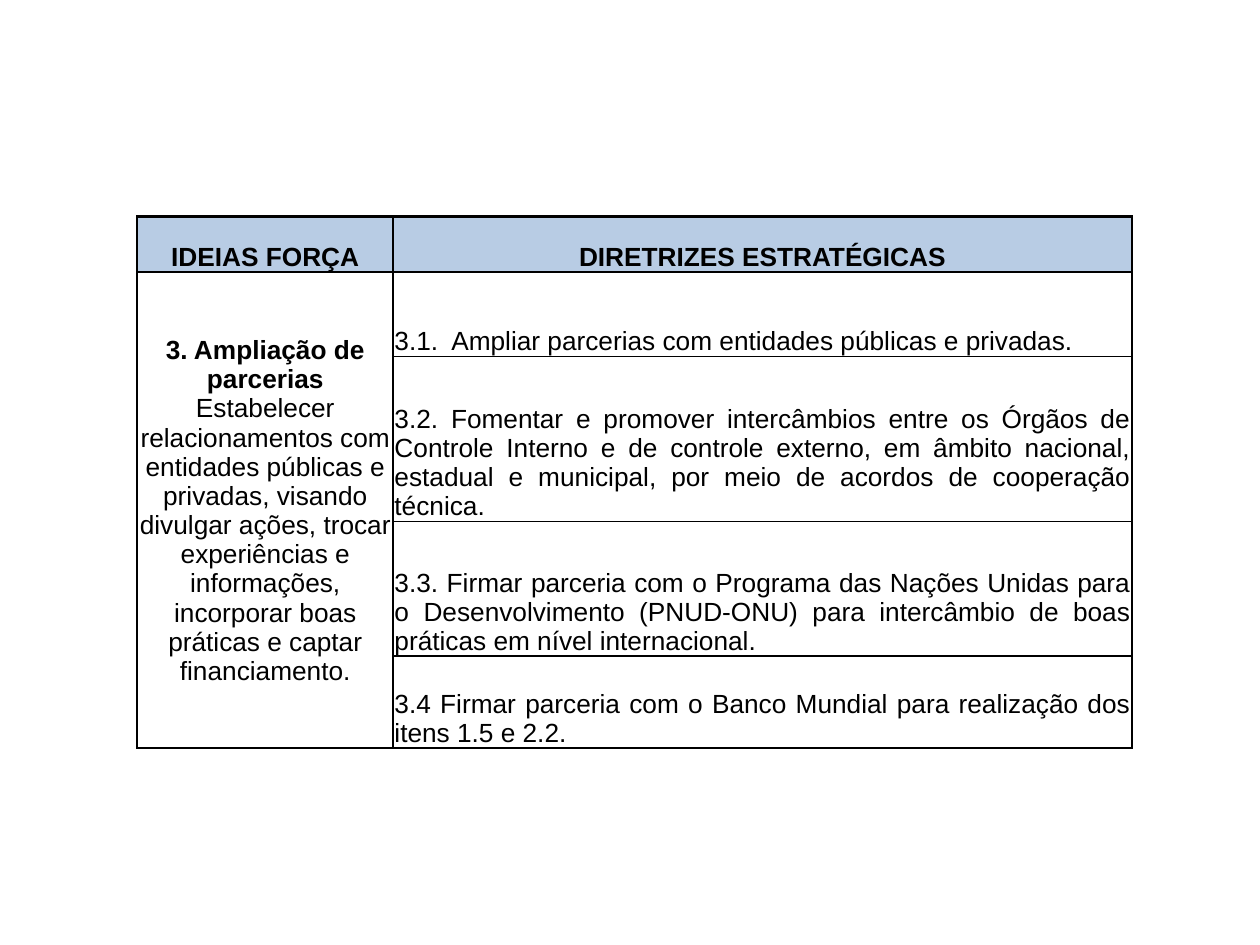
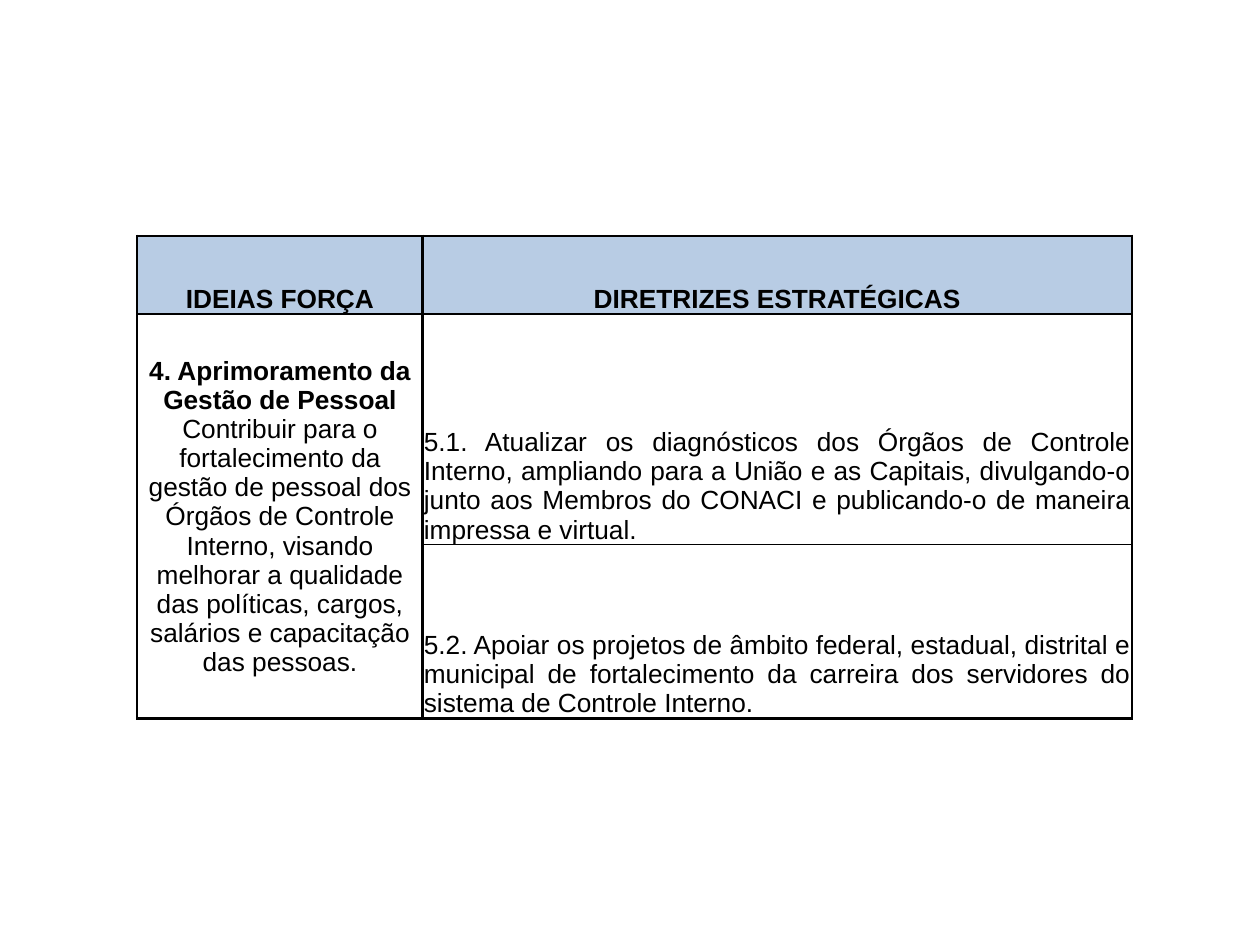
from lxml import etree
from pptx import Presentation
from pptx.dml.color import RGBColor
from pptx.enum.text import MSO_ANCHOR, PP_ALIGN
from pptx.oxml.ns import qn
from pptx.util import Pt

CENTER, JUSTIFY = PP_ALIGN.CENTER, PP_ALIGN.JUSTIFY
BOTTOM, MIDDLE = MSO_ANCHOR.BOTTOM, MSO_ANCHOR.MIDDLE
BLACK, HEADER_BLUE = "000000", "B8CCE4"
FONT, SIZE = "Arial", 15
THICK, THIN = 1.5, 1
LEFT, WIDTH = 78.5, 568.3
HEADINGS = ("IDEIAS FORÇA", "DIRETRIZES ESTRATÉGICAS")

SLIDES = [
    dict(
        top=123.8, idea_width=146.2, heights=[31.7, 48.2, 94.3, 77, 52.6], header_line=THIN,
        title="3. Ampliação de parcerias ",
        goal="Estabelecer relacionamentos com entidades públicas e privadas, visando divulgar "
             "ações, trocar experiências e informações, incorporar boas práticas e captar "
             "financiamento.",
        guidelines=[
            "3.1.  Ampliar parcerias com entidades públicas e privadas.",
            "3.2. Fomentar e promover intercâmbios entre os Órgãos de Controle Interno e de "
            "controle externo, em âmbito nacional, estadual e municipal, por meio de acordos "
            "de cooperação técnica.",
            "3.3. Firmar parceria com o Programa das Nações Unidas para o Desenvolvimento "
            "(PNUD-ONU) para intercâmbio de boas práticas em nível internacional.",
            "3.4 Firmar parceria com o Banco Mundial para realização dos itens 1.5 e 2.2.",
        ],
    ),
    dict(
        top=134.8, idea_width=163, heights=[44.6, 131.8, 99.4], header_line=THICK,
        title="4. Aprimoramento da Gestão de Pessoal\v",
        goal="Contribuir para o fortalecimento da gestão de pessoal dos Órgãos de Controle "
             "Interno, visando melhorar a qualidade das políticas, cargos, salários e "
             "capacitação das pessoas.",
        guidelines=[
            "5.1. Atualizar os diagnósticos dos Órgãos de Controle Interno, ampliando para a "
            "União e as Capitais, divulgando-o junto aos Membros do CONACI e publicando-o de "
            "maneira impressa e virtual.",
            "5.2. Apoiar os projetos de âmbito federal, estadual, distrital e municipal de "
            "fortalecimento da carreira dos servidores do sistema de Controle Interno.",
        ],
    ),
]


def color(value):
    """Return the RGB colour for a hex string."""
    return RGBColor.from_string(value)


def set_borders(cell, top, bottom):
    """Draw thick sides and the given top and bottom lines, in points."""
    tc_pr = cell._tc.get_or_add_tcPr()
    for side, width in (("L", THICK), ("R", THICK), ("T", top), ("B", bottom)):
        ln = etree.SubElement(tc_pr, qn(f"a:ln{side}"), w=str(int(Pt(width))))
        fill = etree.SubElement(ln, qn("a:solidFill"))
        etree.SubElement(fill, qn("a:srgbClr"), val=BLACK)


def set_text(cell, text, align, anchor=BOTTOM, bold=False, tail=""):
    """Write a cell's text, with an optional regular-weight tail."""
    cell.vertical_anchor = anchor
    p = cell.text_frame.paragraphs[0]
    p.text = text
    p.alignment = align
    if tail:
        p.add_run().text = tail
    for i, r in enumerate(p.runs):
        r.font.name, r.font.size = FONT, Pt(SIZE)
        r.font.color.rgb = color(BLACK)
        r.font.bold = bold and i == 0
    for br in p._p.findall(qn("a:br")):
        etree.SubElement(br, qn("a:rPr"), sz=str(SIZE * 100))


def style_cells(table, header_line):
    """Set the margins, borders and fill of every cell."""
    last = len(table.rows) - 1
    for row in range(last + 1):
        for col in range(2):
            cell = table.cell(row, col)
            cell.margin_left = cell.margin_right = cell.margin_top = Pt(0.75)
            cell.margin_bottom = Pt(0)
            top = THICK if row == 0 else header_line if row == 1 else THIN
            closes = row == last or (col == 0 and row > 0)
            bottom = header_line if row == 0 else THICK if closes else THIN
            set_borders(cell, top, bottom)
            if row == 0:
                cell.fill.solid()
                cell.fill.fore_color.rgb = color(HEADER_BLUE)
            else:
                cell.fill.background()


def add_guideline_table(s, top, idea_width, heights, header_line, title, goal, guidelines):
    """Add a table that sets one key idea beside its guidelines."""
    frame = s.shapes.add_table(len(heights), 2, Pt(LEFT), Pt(top), Pt(WIDTH), Pt(sum(heights)))
    table = frame.table
    table.first_row = table.horz_banding = False
    table.columns[0].width = Pt(idea_width)
    table.columns[1].width = Pt(WIDTH - idea_width)
    for row, height in zip(table.rows, heights):
        row.height = Pt(height)
    style_cells(table, header_line)
    table.cell(1, 0).merge(table.cell(len(guidelines), 0))
    for col, heading in enumerate(HEADINGS):
        set_text(table.cell(0, col), heading, CENTER, bold=True)
    set_text(table.cell(1, 0), title, CENTER, MIDDLE, bold=True, tail=goal)
    for row, guideline in enumerate(guidelines, 1):
        set_text(table.cell(row, 1), guideline, JUSTIFY)


def main():
    """Build and save the presentation."""
    prs = Presentation()
    prs.slide_width, prs.slide_height = Pt(720), Pt(540)
    for content in SLIDES:
        s = prs.slides.add_slide(prs.slide_layouts[6])
        add_guideline_table(s, **content)
    prs.save("out.pptx")


if __name__ == "__main__":
    main()
